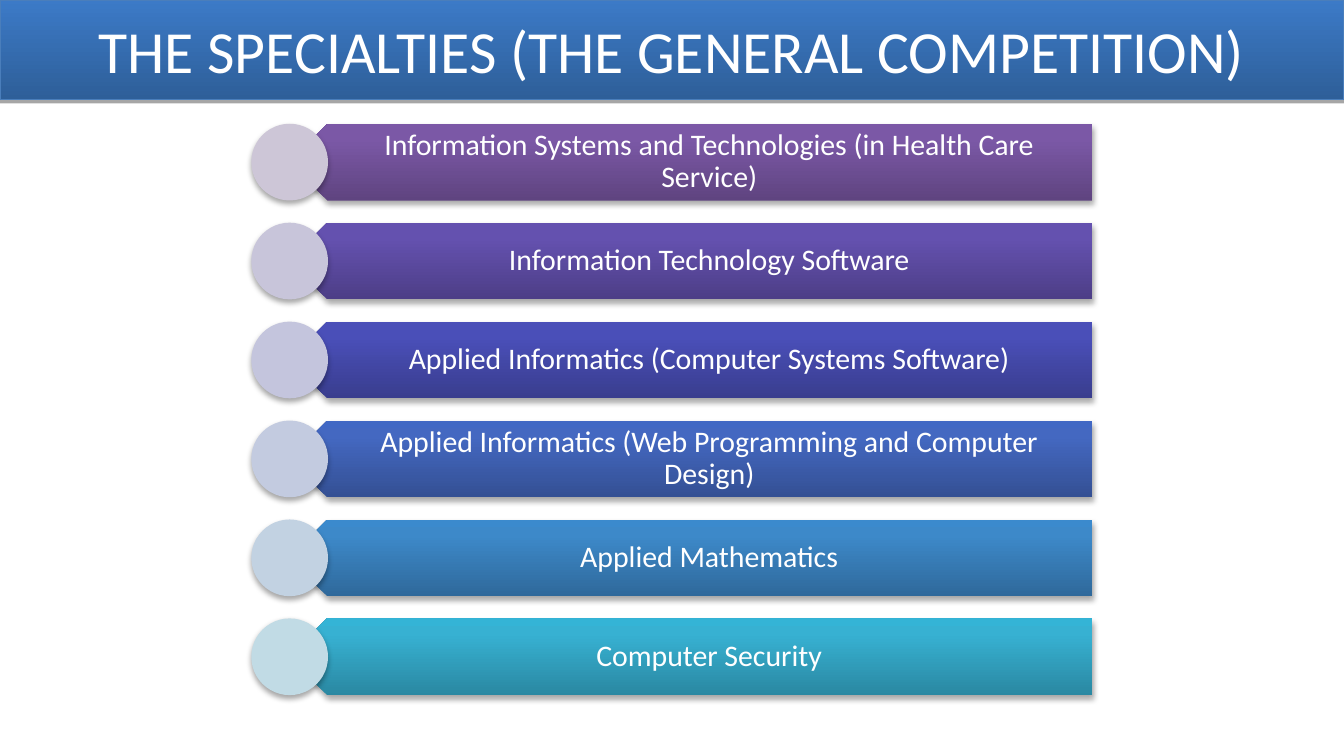
from pptx import Presentation
from pptx.dml.color import RGBColor
from pptx.enum.shapes import MSO_SHAPE as Geometry
from pptx.enum.text import MSO_ANCHOR as Anchor, MSO_AUTO_SIZE as AutoSize, PP_ALIGN as Align
from pptx.oxml import parse_xml
from pptx.oxml.ns import nsdecls, qn
from pptx.util import Cm, Pt

# Content: specialty, gradient from bottom to top, circle colour
HEADING = "THE SPECIALTIES (THE GENERAL COMPETITION)"
SPECIALTIES = [
    ("Information Systems and Technologies (in Health Care Service)",
     ("5F4480", "7B58A6", "7C57A8"), "CDC6D7"),
    ("Information Technology Software",
     ("4D3E87", "6451AF", "6450B2"), "C8C5DA"),
    ("Applied Informatics (Computer Systems Software)",
     ("393D8E", "4A4FB8", "484EBB"), "C4C5DD"),
    ("Applied Informatics (Web Programming and Computer Design)",
     ("345094", "4468C1", "4168C4"), "C3CBE0"),
    ("Applied Mathematics",
     ("2F699B", "3D89C9", "3B8ACD"), "C2D2E2"),
    ("Computer Security",
     ("2A88A2", "37B1D2", "34B4D6"), "C1DBE5"),
]

# Colours and font
WHITE = RGBColor(0xFF, 0xFF, 0xFF)
HEADING_EDGE = RGBColor(0x4A, 0x7E, 0xBB)
HEADING_DARK = RGBColor(0x2E, 0x5F, 0x99)
HEADING_LIGHT = RGBColor(0x3C, 0x7A, 0xC7)
FONT = "Calibri"

# Layout
SLIDE_WIDTH, SLIDE_HEIGHT = Cm(25.4), Cm(14.29)
HEADING_HEIGHT = Cm(1.88)
FIRST_TOP, ROW_STEP, ROW_HEIGHT = Cm(2.34), Cm(1.87), Cm(1.45)
CIRCLE_LEFT = Cm(4.75)
BAR_LEFT, BAR_WIDTH = Cm(5.46), Cm(15.19)
LABEL_LEFT, LABEL_WIDTH = Cm(5.82), Cm(14.83)


def fill_gradient(shape, stops):
    """Fill upwards with (percent, colour) stops, whatever the rotation."""
    marks = "".join(
        f'<a:gs pos="{percent * 1000}"><a:srgbClr val="{colour}"/></a:gs>'
        for percent, colour in stops)
    gradient = parse_xml(
        f'<a:gradFill {nsdecls("a")} rotWithShape="0"><a:gsLst>{marks}</a:gsLst>'
        '<a:lin ang="16200000" scaled="0"/></a:gradFill>')
    shape.fill.gradient()
    properties = shape.element.spPr
    properties.replace(properties.find(qn("a:gradFill")), gradient)


def add_shadow(shape, blur):
    shape.shadow.inherit = False
    shape.element.spPr.find(qn("a:effectLst")).append(parse_xml(
        f'<a:outerShdw {nsdecls("a")} blurRad="{Pt(blur)}" dist="{Pt(1.8)}" '
        'dir="5400000" rotWithShape="0"><a:srgbClr val="000000">'
        '<a:alpha val="35000"/></a:srgbClr></a:outerShdw>'))


def write(shape, text, size, insets):
    frame = shape.text_frame
    frame.word_wrap = True
    frame.auto_size = AutoSize.NONE
    frame.vertical_anchor = Anchor.MIDDLE
    (frame.margin_left, frame.margin_top,
     frame.margin_right, frame.margin_bottom) = map(Cm, insets)
    paragraph = frame.paragraphs[0]
    paragraph.alignment = Align.CENTER
    run = paragraph.add_run()
    run.text = text
    run.font.name = FONT
    run.font.size = Pt(size)
    run.font.color.rgb = WHITE
    return paragraph


def add_row(group, top, specialty, bar_colours, circle_colour):
    bar = group.shapes.add_shape(
        Geometry.PENTAGON, BAR_LEFT, top, BAR_WIDTH, ROW_HEIGHT)
    bar.rotation = 180
    fill_gradient(bar, zip((0, 80, 100), bar_colours))

    label = group.shapes.add_textbox(LABEL_LEFT, top, LABEL_WIDTH, ROW_HEIGHT)
    write(label, specialty, 16, (0.64, 0.18, 0.3, 0.18)).line_spacing = 0.9

    circle = group.shapes.add_shape(
        Geometry.OVAL, CIRCLE_LEFT, top, ROW_HEIGHT, ROW_HEIGHT)
    circle.fill.solid()
    circle.fill.fore_color.rgb = RGBColor.from_string(circle_colour)

    for shape in (bar, circle):
        shape.line.fill.background()
        add_shadow(shape, 3.1)


def main():
    deck = Presentation()
    deck.slide_width, deck.slide_height = SLIDE_WIDTH, SLIDE_HEIGHT
    slide = deck.slides.add_slide(deck.slide_layouts[5])

    # Heading band
    heading = slide.shapes.title
    heading.left, heading.top = Cm(0), Cm(0)
    heading.width, heading.height = SLIDE_WIDTH, HEADING_HEIGHT
    fill_gradient(heading, [(0, HEADING_DARK), (100, HEADING_LIGHT)])
    heading.line.color.rgb = HEADING_EDGE
    heading.line.width = Pt(0.75)
    add_shadow(heading, 0)
    write(heading, HEADING, 32, (0.25, 0.13, 0.25, 0.13))

    # List of specialties
    group = slide.shapes.add_group_shape()
    for index, row in enumerate(SPECIALTIES):
        add_row(group, FIRST_TOP + index * ROW_STEP, *row)

    deck.save("out.pptx")


if __name__ == "__main__":
    main()
